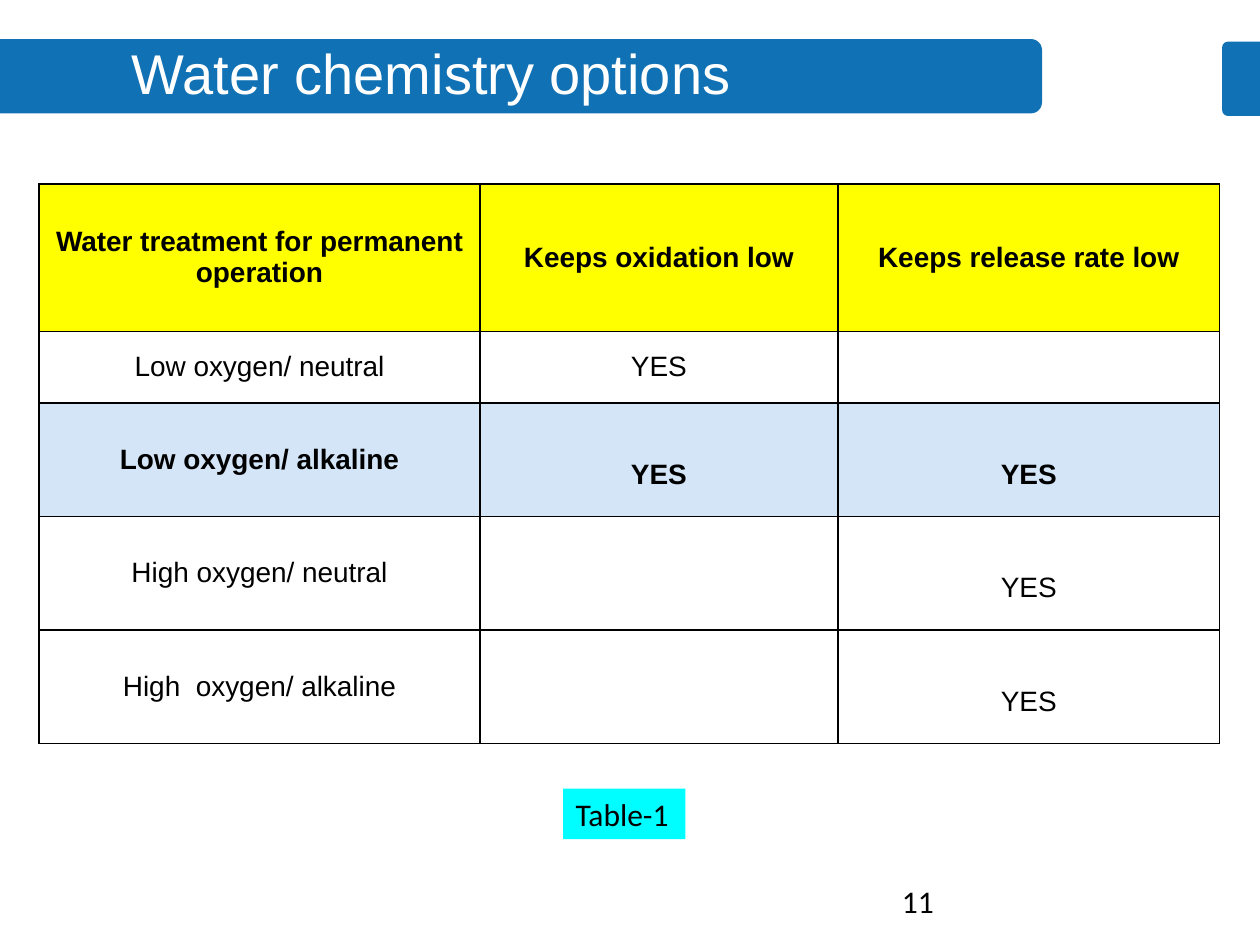
from dataclasses import dataclass
from typing import Any

from lxml import etree
from pptx import Presentation
from pptx.dml.color import RGBColor
from pptx.enum import shapes, text
from pptx.oxml import ns
from pptx.util import Inches, Pt


@dataclass(frozen=True)
class Theme:
    bar: str = "1071B4"
    header: str = "FFFF00"
    highlight: str = "D4E5F7"
    label: str = "00FDFF"
    ink: str = "000000"
    light: str = "FFFFFF"
    heading_font: str = "Arial"
    note_font: str = "Calibri"
    title_size: int = 32
    cell_size: int = 16
    note_size: int = 18
    border: int = 1


@dataclass(frozen=True)
class Bar:
    left: float
    top: float
    width: float
    rotation: int


@dataclass(frozen=True)
class Row:
    height: float
    cells: tuple[str, str, str]
    fill: str | None = None
    bold: bool = False
    answer_drop: float = 0


THEME = Theme()
BAR_HEIGHT = 0.59
MARGIN = 0.05
DROP = 0.24
COLUMNS = (3.5, 2.84, 3.03)
BARS = (Bar(0, 0.31, 8.27, 90), Bar(9.7, 0.33, 0.3, 270))
ROWS = (
    Row(1.17, ("Water treatment for permanent operation", "Keeps oxidation low",
               "Keeps release rate low"), THEME.header, True),
    Row(0.57, ("Low oxygen/ neutral", "YES", "")),
    Row(0.9, ("Low oxygen/ alkaline", "YES", "YES"), THEME.highlight, True, DROP),
    Row(0.9, ("High oxygen/ neutral", "", "YES"), answer_drop=DROP),
    Row(0.9, ("High  oxygen/ alkaline", "", "YES"), answer_drop=DROP),
)
TITLE_FORMAT = {"name": THEME.heading_font, "size": Pt(THEME.title_size)}
CELL_FORMAT = {"name": THEME.heading_font, "size": Pt(THEME.cell_size)}
NOTE_FORMAT = {"name": THEME.note_font, "size": Pt(THEME.note_size)}


def apply(target: Any, values: dict[str, Any]) -> None:
    for name, value in values.items():
        setattr(target, name, value)


def write(tf: Any, words: str, fmt: dict[str, Any], color: str, align: Any) -> None:
    p = tf.paragraphs[0]
    p.alignment = align
    r = p.add_run()
    r.text = words
    apply(r.font, fmt)
    r.font.color.rgb = RGBColor.from_string(color)


def paint(sp: Any, color: str) -> None:
    sp.fill.solid()
    sp.fill.fore_color.rgb = RGBColor.from_string(color)


def add_box(s: Any, kind: Any, left: float, top: float, width: float,
            height: float, color: str) -> Any:
    sp = s.shapes.add_shape(kind, Inches(left), Inches(top), Inches(width), Inches(height))
    sp.shadow.inherit = False
    sp.line.fill.background()
    paint(sp, color)
    return sp


def add_bar(s: Any, bar: Bar) -> None:
    shift = (bar.width - BAR_HEIGHT) / 2
    sp = add_box(s, shapes.MSO_SHAPE.ROUND_2_SAME_RECTANGLE, bar.left + shift,
                 bar.top - shift, BAR_HEIGHT, bar.width, THEME.bar)
    sp.rotation = bar.rotation
    sp.adjustments[0] = 0.15
    s.shapes.title.element.addprevious(sp.element)


def add_title(s: Any) -> None:
    sp = s.shapes.title
    apply(sp, {"left": Inches(0.93), "top": Inches(0.25),
               "width": Inches(4.99), "height": Inches(0.64)})
    apply(sp.text_frame, {"word_wrap": False, "vertical_anchor": text.MSO_ANCHOR.MIDDLE})
    write(sp.text_frame, "Water chemistry options", TITLE_FORMAT, THEME.light,
          text.PP_ALIGN.CENTER)


def add_borders(cell: Any) -> None:
    props = cell._tc.get_or_add_tcPr()
    for side in ("lnL", "lnR", "lnT", "lnB"):
        line = etree.SubElement(props, ns.qn(f"a:{side}"), w=str(Pt(THEME.border)))
        fill = etree.SubElement(line, ns.qn("a:solidFill"))
        etree.SubElement(fill, ns.qn("a:srgbClr"), val=THEME.ink)


def fill_cell(cell: Any, row: Row, words: str, drop: float) -> None:
    add_borders(cell)
    if row.fill:
        paint(cell, row.fill)
    else:
        cell.fill.background()
    apply(cell, {"vertical_anchor": text.MSO_ANCHOR.MIDDLE,
                 "margin_top": Inches(MARGIN + drop), "margin_bottom": Inches(MARGIN)})
    if words:
        write(cell.text_frame, words, CELL_FORMAT | {"bold": row.bold}, THEME.ink,
              text.PP_ALIGN.CENTER)


def add_options_table(s: Any) -> None:
    height = sum(row.height for row in ROWS)
    table = s.shapes.add_table(len(ROWS), len(COLUMNS), Inches(0.31), Inches(1.46),
                               Inches(sum(COLUMNS)), Inches(height)).table
    apply(table, {"first_row": False, "horz_banding": False})
    for column, width in zip(table.columns, COLUMNS):
        column.width = Inches(width)
    for i, row in enumerate(ROWS):
        table.rows[i].height = Inches(row.height)
        for j, words in enumerate(row.cells):
            fill_cell(table.cell(i, j), row, words, row.answer_drop if j else 0)


def add_notes(s: Any) -> None:
    label = add_box(s, shapes.MSO_SHAPE.RECTANGLE, 4.47, 6.26, 0.97, 0.4, THEME.label)
    number = s.shapes.add_textbox(Inches(7.06), Inches(6.95), Inches(2.25), Inches(0.4))
    for sp, words, wrap in ((label, "Table-1", False), (number, "11", True)):
        sp.text_frame.word_wrap = wrap
        write(sp.text_frame, words, NOTE_FORMAT, THEME.ink, text.PP_ALIGN.LEFT)


def main() -> None:
    prs = Presentation()
    apply(prs, {"slide_width": Inches(10), "slide_height": Inches(7.5)})
    s = prs.slides.add_slide(prs.slide_layouts[5])
    for bar in BARS:
        add_bar(s, bar)
    add_title(s)
    add_options_table(s)
    add_notes(s)
    prs.save("out.pptx")


if __name__ == "__main__":
    main()
